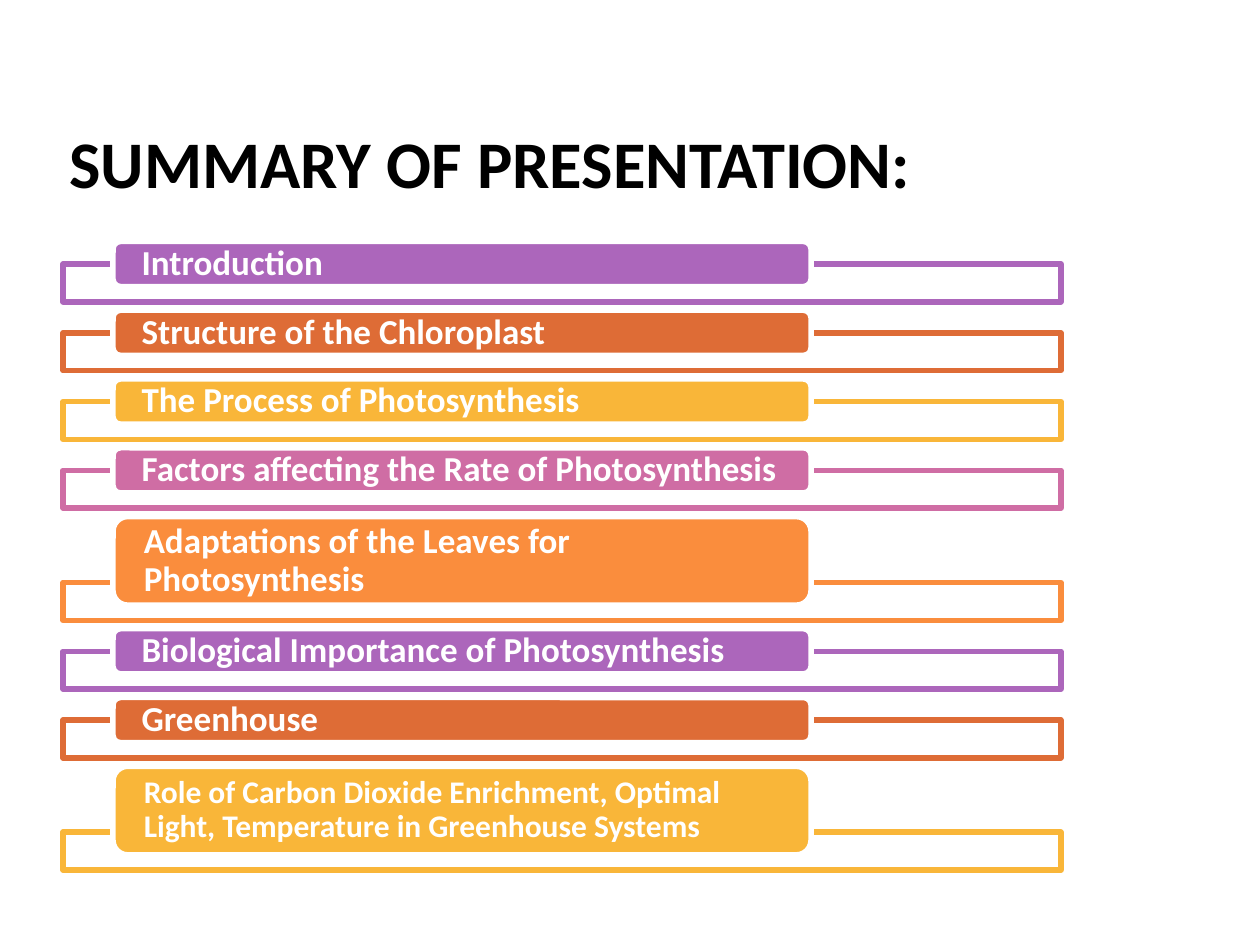
from lxml.etree import SubElement
from pptx import Presentation
from pptx.dml.color import RGBColor
from pptx.enum.shapes import MSO_SHAPE
from pptx.enum.text import MSO_ANCHOR, PP_ALIGN
from pptx.oxml.ns import qn
from pptx.util import Pt

TITLE = "SUMMARY OF PRESENTATION:"
TOPICS = [
    ("Introduction", 1, "topic"),
    ("Structure of the Chloroplast", 1, "topic"),
    ("The Process of Photosynthesis", 1, "topic"),
    ("Factors affecting the Rate of Photosynthesis", 1, "topic"),
    ("Adaptations of the Leaves for Photosynthesis", 2, "topic"),
    ("Biological Importance of Photosynthesis", 1, "topic"),
    ("Greenhouse", 1, "topic"),
    ("Role of Carbon Dioxide Enrichment, Optimal Light, Temperature in Greenhouse Systems",
     2, "long_topic"),
]

THEME = {
    "font": "Calibri",
    "title": "000000",
    "paper": "FFFFFF",
    "accents": ["AC66BB", "DE6C36", "F9B639", "CF6DA4", "FA8D3D"],
    "sizes": {"title": 38, "topic": 20, "long_topic": 18},
    "line": 3.15,
}

LEFT, WIDTH = 36, 570.2
LABEL_LEFT, LABEL_WIDTH = 64.6, 398.9
LABEL_HEIGHTS = {1: 25.8, 2: 50.6}
FRAME_HEIGHT, OVERLAP, GAP = 21.6, 12.9, 4.8
FIRST_TOP = 138


def write(shape, text, size, color, inset, frame_format, paragraph_format):
    frame = shape.text_frame
    margins = {"margin_left": Pt(inset), "margin_right": Pt(inset),
               "margin_top": 0, "margin_bottom": 0, "word_wrap": True}
    paragraph = frame.paragraphs[0]
    paragraph.text = text
    font_format = {"name": THEME["font"], "size": Pt(THEME["sizes"][size]), "bold": True}
    for target, values in (
        (frame, margins | frame_format),
        (paragraph, {"alignment": PP_ALIGN.LEFT} | paragraph_format),
        (paragraph.font, font_format),
    ):
        for name, value in values.items():
            setattr(target, name, value)
    paragraph.font.color.rgb = RGBColor.from_string(color)


def add_box(slide, preset, left, top, width, height, fill, line):
    box = slide.shapes.add_shape(preset, Pt(left), Pt(top), Pt(width), Pt(height))
    box.shadow.inherit = False
    box.fill.solid()
    box.fill.fore_color.rgb = RGBColor.from_string(fill)
    box.line.color.rgb = RGBColor.from_string(line)
    box.line.width = Pt(THEME["line"])
    return box


def add_topic(slide, top, label_height, text, size, accent):
    frame_top = top + label_height - OVERLAP
    frame = add_box(slide, MSO_SHAPE.RECTANGLE, LEFT, frame_top, WIDTH, FRAME_HEIGHT,
                    THEME["paper"], accent)
    frame_color = frame.fill._xPr.find(qn("a:solidFill"))[0]
    SubElement(frame_color, qn("a:alpha"), val="90000")
    label = add_box(slide, MSO_SHAPE.ROUNDED_RECTANGLE, LABEL_LEFT, top, LABEL_WIDTH,
                    label_height, accent, THEME["paper"])
    write(label, text, size, THEME["paper"], 15.1,
          {"vertical_anchor": MSO_ANCHOR.MIDDLE}, {"line_spacing": 0.9})
    return frame_top + FRAME_HEIGHT + GAP


def main():
    presentation = Presentation()
    presentation.slide_width, presentation.slide_height = Pt(720), Pt(540)
    slide = presentation.slides.add_slide(presentation.slide_layouts[6])

    title = slide.shapes.add_textbox(Pt(LEFT), Pt(25.2), Pt(WIDTH), Pt(90))
    write(title, TITLE, "title", THEME["title"], 3.6,
          {"vertical_anchor": MSO_ANCHOR.BOTTOM}, {})

    top = FIRST_TOP
    accents = THEME["accents"]
    for index, (text, lines, size) in enumerate(TOPICS):
        top = add_topic(slide, top, LABEL_HEIGHTS[lines], text, size,
                        accents[index % len(accents)])

    presentation.save("out.pptx")


if __name__ == "__main__":
    main()
